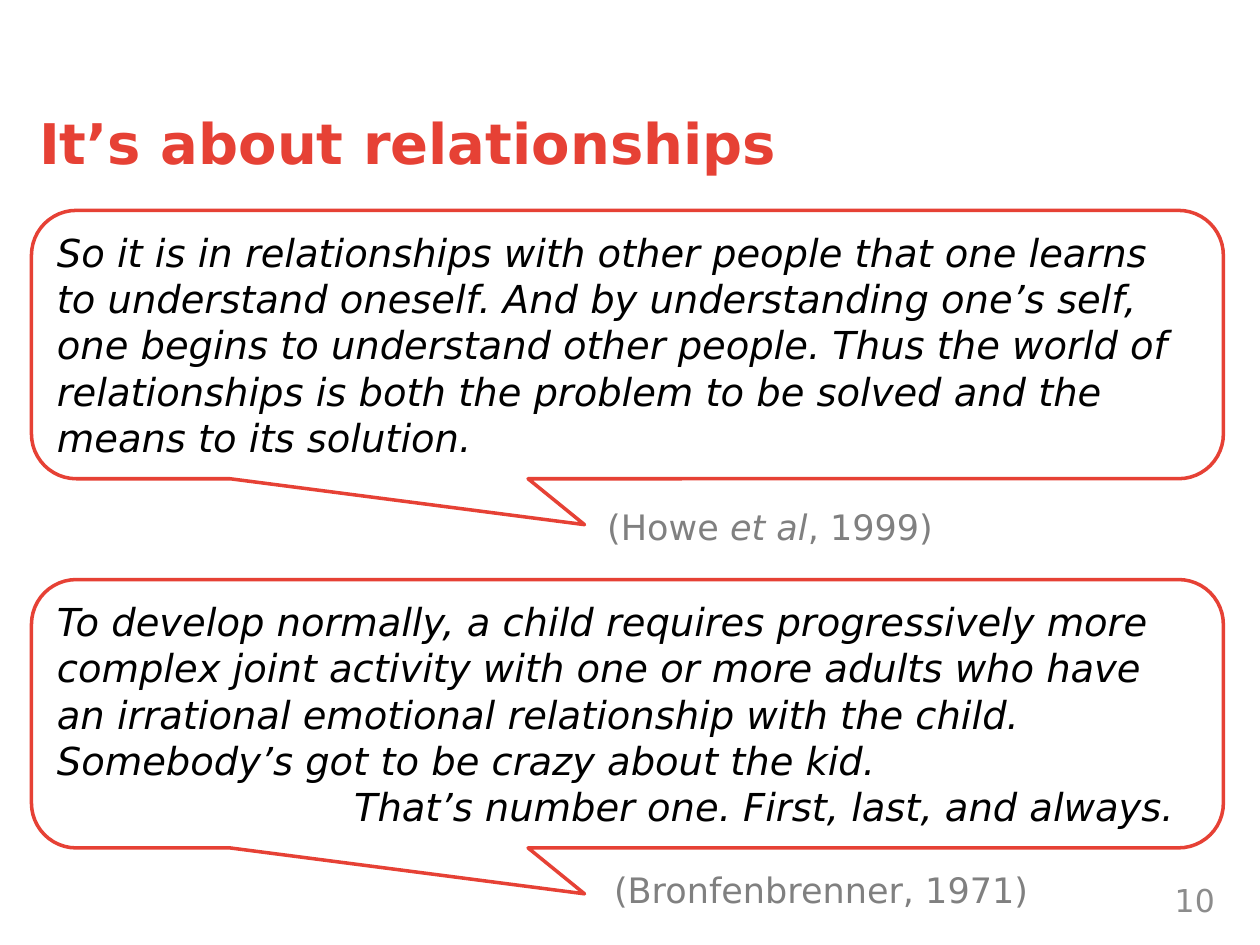
from pptx import Presentation
from pptx.dml.color import RGBColor
from pptx.enum.shapes import MSO_SHAPE
from pptx.enum.text import MSO_ANCHOR, PP_ALIGN
from pptx.util import Inches, Pt

FONT = "DejaVu Sans"
COLORS = {"accent": "E64135", "text": "000000", "citation": "808080", "number": "8C8C8C"}
LEFT, RIGHT = PP_ALIGN.LEFT, PP_ALIGN.RIGHT

TITLE = "It’s about relationships"
PAGE_NUMBER = "10"

# A paragraph is (alignment, runs); a run is (text, italic). "\v" is a line break.
QUOTES = [
    {
        "top": 1.67,
        "quote": [(LEFT, [(
            "So it is in relationships with other people that one learns\v"
            "to understand oneself. And by understanding one’s self,\v"
            "one begins to understand other people. Thus the world of\v"
            "relationships is both the problem to be solved and the\v"
            "means to its solution.", True)])],
        "citation": [(LEFT, [("(Howe ", False), ("et al", True), (", 1999)", False)])],
        "citation_area": (4.72, 3.96, 3.35, 0.44),
    },
    {
        "top": 4.6,
        "quote": [
            (LEFT, [(
                "To develop normally, a child requires progressively more\v"
                "complex joint activity with one or more adults who have\v"
                "an irrational emotional relationship with the child.", True)]),
            (LEFT, [("Somebody’s got to be crazy about the kid.", True)]),
            (RIGHT, [("That’s number one. First, last, and always.", True)]),
        ],
        "citation": [(RIGHT, [("(Bronfenbrenner, 1971)", False)])],
        "citation_area": (4.72, 6.84, 3.54, 0.44),
    },
]
CALLOUT_LEFT, CALLOUT_WIDTH, CALLOUT_HEIGHT = 0.25, 9.46, 2.13
CALLOUT_ADJUSTMENTS = (-0.036, 0.671, 0.167)


def color(name):
    return RGBColor.from_string(COLORS[name])


def inches(area):
    return [Inches(length) for length in area]


def write(frame, paragraphs, size, color_name, bold=False, anchor=MSO_ANCHOR.TOP):
    frame.word_wrap = True
    frame.vertical_anchor = anchor
    for index, (alignment, runs) in enumerate(paragraphs):
        para = frame.add_paragraph() if index else frame.paragraphs[0]
        para.alignment = alignment
        for text, italic in runs:
            for line_index, line in enumerate(text.split("\v")):
                if line_index:
                    para.add_line_break()
                span = para.add_run()
                span.text = line
                span.font.name = FONT
                span.font.size = Pt(size)
                span.font.bold = bold
                span.font.italic = italic
                span.font.color.rgb = color(color_name)


def add_callout(page, top, paragraphs):
    callout = page.shapes.add_shape(
        MSO_SHAPE.ROUNDED_RECTANGULAR_CALLOUT,
        *inches((CALLOUT_LEFT, top, CALLOUT_WIDTH, CALLOUT_HEIGHT)))
    for index, value in enumerate(CALLOUT_ADJUSTMENTS):
        callout.adjustments[index] = value
    callout.shadow.inherit = False
    callout.fill.background()
    callout.line.color.rgb = color("accent")
    callout.line.width = Pt(2)
    callout.text_frame.margin_right = Inches(0.29)
    write(callout.text_frame, paragraphs, 22, "text", anchor=MSO_ANCHOR.MIDDLE)


def main():
    deck = Presentation()
    deck.slide_width, deck.slide_height = Inches(10), Inches(7.5)
    page = deck.slides.add_slide(deck.slide_layouts[5])

    title = page.shapes.title
    title.left, title.top, title.width, title.height = inches((0.21, 0.87, 9.5, 1.24))
    write(title.text_frame, [(LEFT, [(TITLE, False)])], 32, "accent", bold=True)
    title.text_frame.paragraphs[0].line_spacing = 0.9

    for entry in QUOTES:
        add_callout(page, entry["top"], entry["quote"])
        box = page.shapes.add_textbox(*inches(entry["citation_area"]))
        write(box.text_frame, entry["citation"], 20, "citation")

    box = page.shapes.add_textbox(*inches((7.41, 6.94, 2.33, 0.4)))
    write(box.text_frame, [(RIGHT, [(PAGE_NUMBER, False)])], 18, "number",
          anchor=MSO_ANCHOR.MIDDLE)

    deck.save("out.pptx")


if __name__ == "__main__":
    main()
